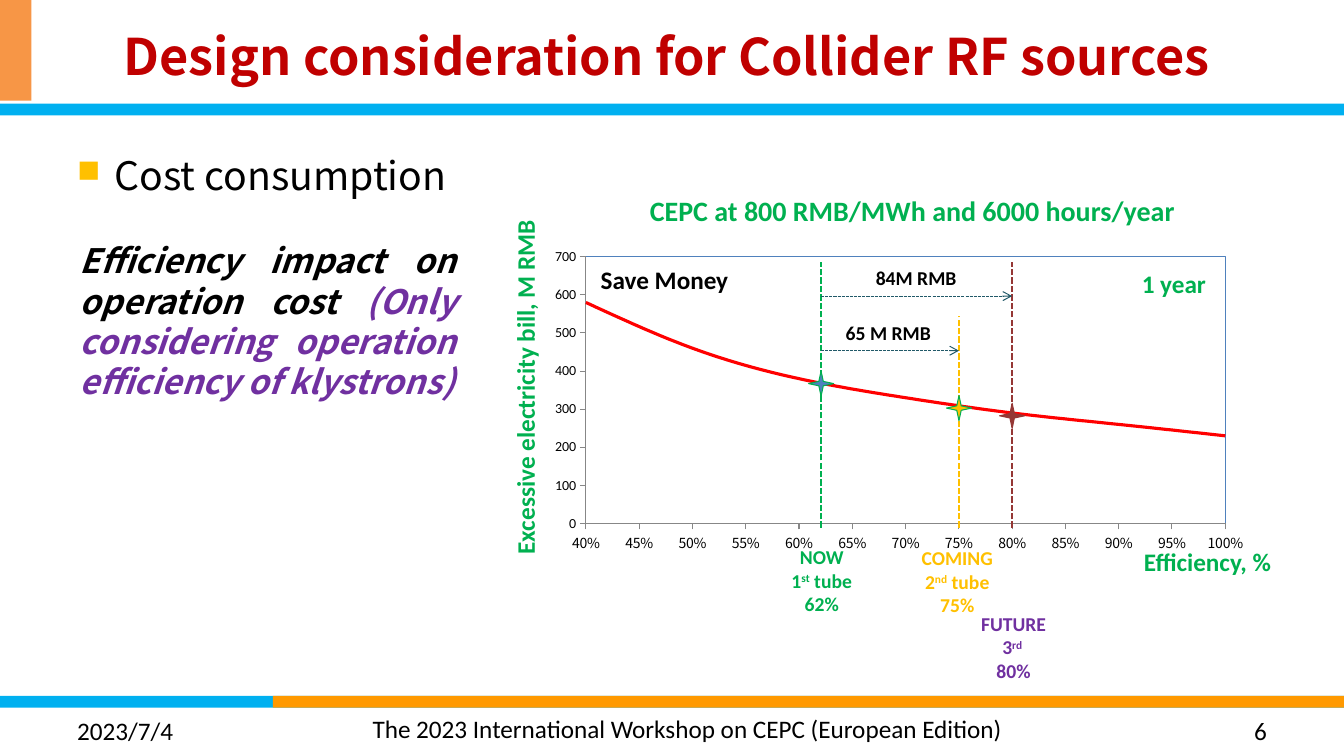
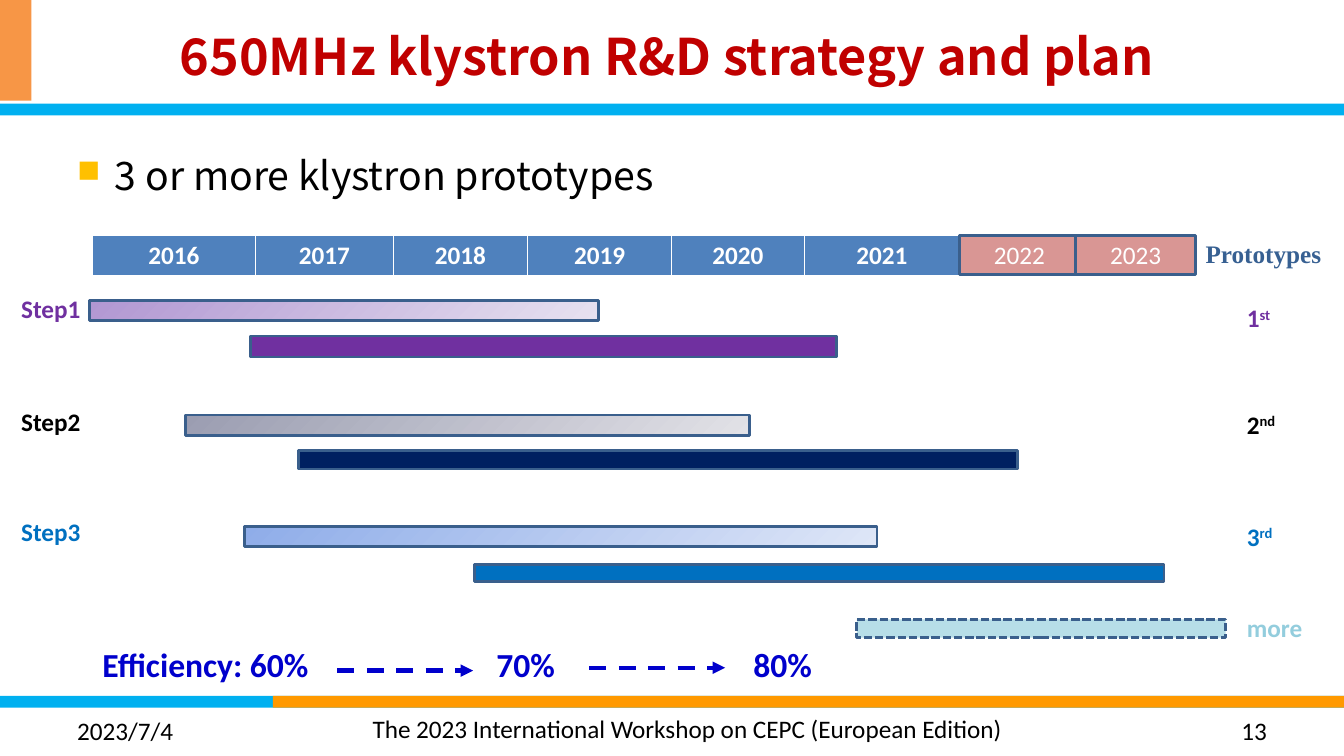
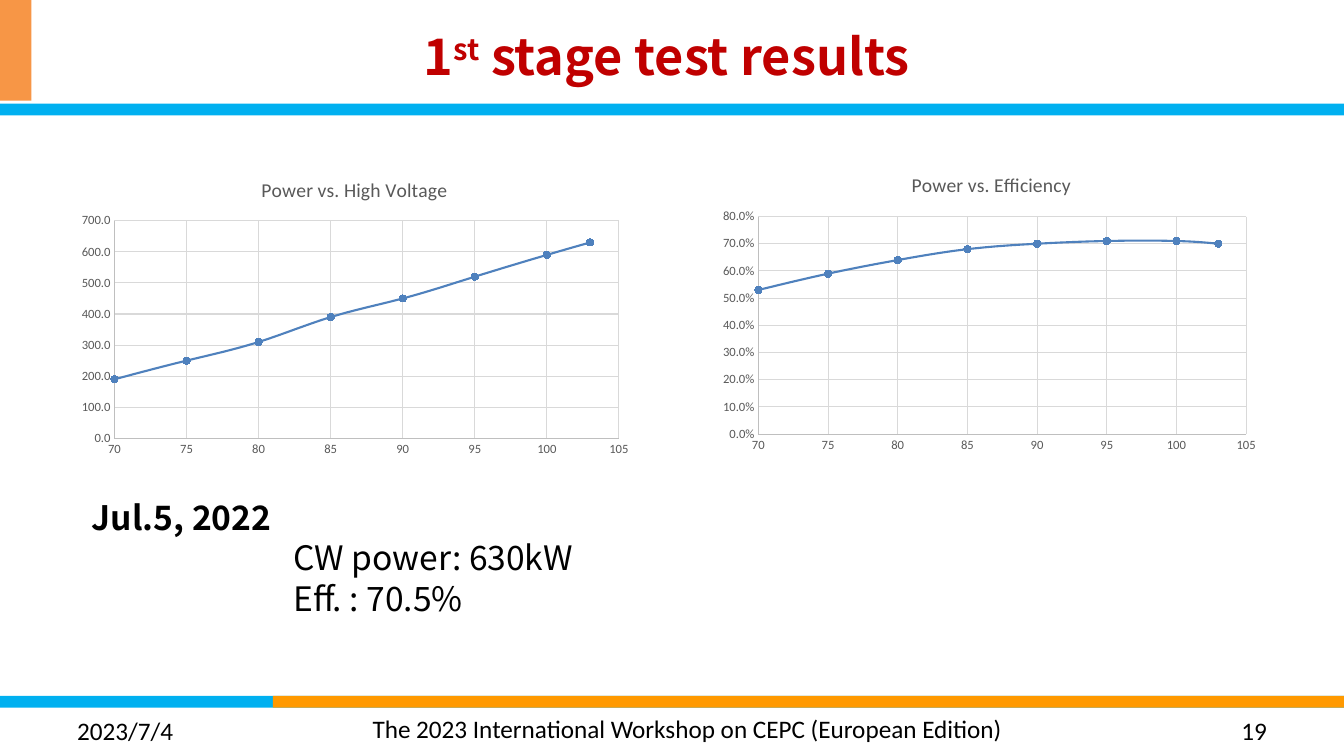
from dataclasses import dataclass, replace
from lxml.etree import SubElement
from pptx import Presentation
from pptx.chart.data import XyChartData
from pptx.dml.color import RGBColor
from pptx.enum.chart import XL_CHART_TYPE as Kind, XL_MARKER_STYLE as Mark
from pptx.enum.chart import XL_TICK_MARK as Tick
from pptx.enum.dml import MSO_LINE as Dash
from pptx.enum.shapes import MSO_CONNECTOR as Conn, MSO_SHAPE as Form
from pptx.enum.text import MSO_ANCHOR as Anchor, MSO_AUTO_SIZE as Fit, PP_ALIGN as Align
from pptx.oxml import parse_xml
from pptx.oxml.ns import nsdecls, qn
from pptx.util import Pt

BLACK = RGBColor(0, 0, 0)
WHITE = RGBColor(255, 255, 255)
SKY = RGBColor(0, 0xB0, 0xF0)
AMBER = RGBColor(0xFF, 0x99, 0)
PEACH = RGBColor(0xF7, 0x96, 0x46)
CRIMSON = RGBColor(0xC0, 0, 0)
RED = RGBColor(255, 0, 0)
GREEN = RGBColor(0, 0xB0, 0x50)
GOLD = RGBColor(0xFF, 0xC0, 0)
PURPLE = RGBColor(0x70, 0x30, 0xA0)
BROWN = RGBColor(0x95, 0x37, 0x35)
TEAL = RGBColor(0x21, 0x59, 0x68)
STEEL = RGBColor(0x4F, 0x81, 0xBD)
EDGE = RGBColor(0x3A, 0x5F, 0x8C)
NAVY = RGBColor(0, 0x20, 0x60)
BLUE = RGBColor(0, 0x70, 0xC0)
ROYAL = RGBColor(0, 0, 0xCC)
DUSK = RGBColor(0x37, 0x60, 0x92)
ROSE = RGBColor(0xD9, 0x96, 0x94)
ICE = RGBColor(0xB7, 0xDE, 0xE8)
AQUA = RGBColor(0x93, 0xCD, 0xDD)
INK = RGBColor(0x59, 0x59, 0x59)
GRAY = RGBColor(0x87, 0x87, 0x87)
SILVER = RGBColor(0xBF, 0xBF, 0xBF)
MIST = RGBColor(0xD9, 0xD9, 0xD9)
LILAC = RGBColor(0xB1, 0x97, 0xD2), RGBColor(0xE7, 0xE1, 0xF0)
SLATE = RGBColor(0x9B, 0x9D, 0xB1), RGBColor(0xE2, 0xE2, 0xE7)
AZURE = RGBColor(0x8F, 0xAD, 0xE9), RGBColor(0xDE, 0xE6, 0xF7)

SANS = "Calibri"
NOTO = "Noto Sans CJK SC"
SERIF = "Times New Roman"
WIDE, HIGH = 960, 540


@dataclass(frozen=True)
class Style:
    size: float = 18
    color: RGBColor = BLACK
    bold: bool = False
    face: str = SANS
    ital: bool = False
    sup: bool = False


BASE = Style()
HEAD = Style(36, CRIMSON, True, NOTO)
BODY = Style(28, face=NOTO)
NOTE = Style(24, face=NOTO)
TAG = Style(14, bold=True)
SUP = dict(sup=True)


def pts(*nums):
    return [Pt(n) for n in nums]


def dress(font, style):
    font.name, font.size = style.face, Pt(style.size)
    font.bold, font.italic = style.bold, style.ital
    font.color.rgb = style.color


def fill_para(para, runs, style, align=None):
    """Add runs; each is a string or a (string, style changes) pair."""
    para.alignment = align
    for item in [runs] if isinstance(runs, str) else runs:
        text, diff = (item, {}) if isinstance(item, str) else item
        look = replace(style, **diff)
        run = para.add_run()
        run.text = text
        dress(run.font, look)
        if look.sup:
            run.font._element.set("baseline", "30000")


def add_text(slide, box, paras, style, align=None, wrap=False):
    """Add a text box; unless it wraps, it grows to fit its lines."""
    shape = slide.shapes.add_textbox(*pts(*box))
    frame = shape.text_frame
    frame.word_wrap = wrap
    frame.auto_size = Fit.NONE if wrap else Fit.SHAPE_TO_FIT_TEXT
    for i, runs in enumerate(paras):
        para = frame.add_paragraph() if i else frame.paragraphs[0]
        fill_para(para, runs, style, align)
    return shape


def add_form(slide, box, fill, edge=None, width=2, dash=None, form=Form.RECTANGLE):
    """Add a preset shape; a pair of fill colours makes a gradient."""
    shape = slide.shapes.add_shape(form, *pts(*box))
    shape.shadow.inherit = False
    if isinstance(fill, RGBColor):
        shape.fill.solid()
        shape.fill.fore_color.rgb = fill
    else:
        shape.fill.gradient()
        shape.fill.gradient_angle = 315
        for stop, color in zip(shape.fill.gradient_stops, fill):
            stop.color.rgb = color
    if edge is None:
        shape.line.fill.background()
    else:
        shape.line.color.rgb, shape.line.width = edge, Pt(width)
        shape.line.dash_style = dash
    return shape


def add_line(slide, ends, color, width, dash, head=None):
    link = slide.shapes.add_connector(Conn.STRAIGHT, *pts(*ends))
    link.line.color.rgb, link.line.width = color, Pt(width)
    link.line.dash_style = dash
    props = link._element.spPr
    if head:
        SubElement(props.find(qn("a:ln")), qn("a:tailEnd"), type=head)
    SubElement(props, qn("a:effectLst"))


def add_frame(deck, title, number):
    """Start a slide with the shared bands, title and footer."""
    slide = deck.slides.add_slide(deck.slide_layouts[6])
    for box, color in [
        ((0, 497, WIDE, 8.5), SKY),
        ((195, 497, WIDE - 195, 8.5), AMBER),
        ((0, 74, WIDE, 8.5), SKY),
        ((0, 0, 22.5, 72), PEACH),
    ]:
        add_form(slide, box, color)
    add_text(slide, (259, 506, 480, 29),
             ["The 2023 International Workshop on CEPC (European Edition)"], BASE, wrap=True)
    add_text(slide, (48, 507.5, 224, 29), ["2023/7/4"], BASE, wrap=True)
    add_text(slide, (688, 507.5, 224, 29), [str(number)], BASE, Align.RIGHT, True)
    head = add_text(slide, (52.5, 11, 847.5, 57), [title], HEAD, Align.CENTER, True)
    head.text_frame.vertical_anchor = Anchor.MIDDLE
    return slide


def add_point(slide, text):
    """Add the square-bulleted opening line."""
    shape = add_text(slide, (48, 101.5, 864, 61), [text], BODY, Align.JUSTIFY, True)
    para = shape.text_frame.paragraphs[0]
    para.line_spacing, para.space_after = 1.1, Pt(10)
    props = para._p.get_or_add_pPr()
    props.set("marL", str(Pt(27)))
    props.set("indent", str(-Pt(27)))
    color = SubElement(props, qn("a:buClr"))
    SubElement(color, qn("a:srgbClr"), val=str(GOLD))
    SubElement(props, qn("a:buSzPct"), val="80000")
    SubElement(props, qn("a:buChar"), char="■")


def set_place(node, spot, **place):
    """Give a chart part a manual layout, as its child number spot."""
    old = node.find(qn("c:layout"))
    if old is not None:
        node.remove(old)
    layout = parse_xml(f"<c:layout {nsdecls('c')}/>")
    node.insert(spot, layout)
    hold = SubElement(layout, qn("c:manualLayout"))
    if "w" in place:
        SubElement(hold, qn("c:layoutTarget"), val="inner")
    for key in ("xMode", "yMode"):
        SubElement(hold, qn(f"c:{key}"), val="edge")
    for key, val in place.items():
        SubElement(hold, qn(f"c:{key}"), val=str(val))


def set_axis(axis, span, form, style, edge, tick, grid):
    axis.minimum_scale, axis.maximum_scale, axis.major_unit = span
    axis.tick_labels.number_format = form
    axis.tick_labels.number_format_is_linked = False
    dress(axis.tick_labels.font, style)
    axis.format.line.color.rgb, axis.format.line.width = edge, Pt(0.75)
    axis.major_tick_mark, axis.minor_tick_mark = tick, Tick.NONE
    axis.has_major_gridlines = grid
    if grid:
        line = axis.major_gridlines.format.line
        line.color.rgb, line.width = MIST, Pt(0.75)


def add_curve(slide, box, data, color, width, kind, place):
    """Add a smooth one-series scatter chart."""
    table = XyChartData()
    series = table.add_series("Series 1")
    for x, y in data:
        series.add_data_point(x, y)
    chart = slide.shapes.add_chart(kind, *pts(*box), table).chart
    chart.has_legend = chart.has_title = False
    dress(chart.font, Style(10))
    plot = chart.plots[0]
    plot.vary_by_categories = False
    line = plot.series[0].format.line
    line.color.rgb, line.width = color, Pt(width)
    for node in chart._chartSpace.iter(qn("c:smooth")):
        node.set("val", "1")
    set_place(chart._chartSpace.chart.plotArea, 0, **place)
    return chart


def add_bill(slide, box):
    """Add the electricity bill chart with its marks and labels."""
    left, top, width, height = box
    data = zip((0.4, 0.5, 0.6, 0.7, 0.8, 0.9, 1), (580, 460, 380, 330, 290, 260, 230))
    chart = add_curve(slide, box, data, RED, 2.25, Kind.XY_SCATTER_SMOOTH_NO_MARKERS,
                      dict(x=0.066, y=0.069, w=0.9, h=0.851))
    set_axis(chart.category_axis, (0.4, 1, 0.05), "0%", Style(10, face=NOTO),
             GRAY, Tick.OUTSIDE, False)
    set_axis(chart.value_axis, (0, 700, 100), "General", Style(10), GRAY, Tick.OUTSIDE, False)
    chart._chartSpace.chart.plotArea.append(parse_xml(
        f'<c:spPr {nsdecls("c", "a")}><a:ln w="{Pt(0.75)}"><a:solidFill>'
        f'<a:srgbClr val="{STEEL}"/></a:solidFill></a:ln></c:spPr>'))

    lime = Style(18, GREEN, True)
    add_text(slide, (left + 70.5, top - 33, 392.5, 31.5),
             ["CEPC at 800 RMB/MWh and 6000 hours/year"], replace(lime, size=20), Align.CENTER)
    side = add_text(slide, (left - 137.5, top + 93, 255, 29),
                    ["Excessive electricity bill, M RMB"], lime)
    side.rotation = 270
    add_text(slide, (left + 423.5, top + 20, 60.5, 29), ["1 year"], lime)
    add_text(slide, (left + 425, top + 219, 106.5, 29), ["Efficiency, %"], lime)
    add_text(slide, (left + 37, top + 17, 106.5, 29), ["Save Money"], replace(lime, color=BLACK))

    base = top + 209
    marks = [
        (201.5, 19.5, 106, GREEN, STEEL, GREEN),
        (300, 57.5, 123.5, GOLD, GOLD, GREEN),
        (338, 19.5, 129, BROWN, BROWN, BROWN),
    ]
    for x, start, mid, color, fill, edge in marks:
        x += left
        add_line(slide, (x, base, x, top + start), color, 1.5, Dash.SQUARE_DOT)
        add_form(slide, (x - 9, top + mid - 9, 18, 18), fill, edge, 0.75, form=Form.STAR_4_POINT)
    now = left + marks[0][0]
    for mark, y, gap, wide, text in [
        (marks[1], 82.5, 10.5, 76, "65 M RMB"),
        (marks[2], 43.5, 32, 73, "84M RMB"),
    ]:
        y += top
        add_line(slide, (now, y, left + mark[0], y), TEAL, 0.75, Dash.SQUARE_DOT, "arrow")
        add_text(slide, (now + gap, y - 25, wide, 24.5), [text], TAG)
    for x, y, wide, color, paras in [
        (172.5, 218, 59, GREEN, ["NOW", ["1", ("st", SUP), " tube"], "62%"]),
        (264.5, 218.5, 68.5, GOLD, ["COMING", ["2", ("nd", SUP), " tube"], "75%"]),
        (308.5, 265.5, 61, PURPLE, ["FUTURE", ["3", ("rd ", SUP)], "80%"]),
    ]:
        add_text(slide, (left + x, top + y, wide, 58.5), paras,
                 replace(TAG, color=color), Align.CENTER)


def add_years(slide, left, top):
    """Add the year header: a table and two boxes for the later years."""
    cols = (116.5, 98.5, 96, 103, 94.5, 111)
    shape = slide.shapes.add_table(1, len(cols), *pts(left, top, sum(cols), 29.5))
    table = shape.table
    for i, wide in enumerate(cols):
        table.columns[i].width = Pt(wide)
        cell = table.cell(0, i)
        props = cell._tc.get_or_add_tcPr()
        for side, width in zip("LRTB", (1, 1, 1, 3)):
            line = SubElement(props, qn(f"a:ln{side}"), w=str(Pt(width)))
            SubElement(SubElement(line, qn("a:solidFill")), qn("a:srgbClr"), val=str(WHITE))
        cell.fill.solid()
        cell.fill.fore_color.rgb = STEEL
        fill_para(cell.text_frame.paragraphs[0], str(2016 + i),
                  Style(18, WHITE, True), Align.CENTER)
    for year, x in (("2022", 0), ("2023", 83)):
        form = add_form(slide, (left + sum(cols) + x, top, 85.5, 28), ROSE, EDGE)
        form.text_frame.vertical_anchor = Anchor.MIDDLE
        fill_para(form.text_frame.paragraphs[0], year, Style(18, WHITE), Align.CENTER)
    add_text(slide, (left + 788, top - 1, 98, 29), ["Prototypes"], Style(18, DUSK, True, SERIF))


def add_step(slide, top, name, rank, color, bars):
    """Add one step: its name, its rank (offset, runs) and its bars."""
    style = Style(18, color, True)
    add_text(slide, (8, top, 57, 29), [name], style)
    drop, runs = rank
    add_text(slide, (883.5, top + drop, 37, 29), [runs], style)
    for x, y, wide, high, fill in bars:
        add_form(slide, (x, top + y, wide, high), fill, EDGE)


def add_goals(slide, left, top):
    """Add the row of efficiency goals joined by dashed arrows."""
    for x, wide, text in ((0, 170, "Efficiency: 60%"), (281.5, 57, "70%"), (465, 57, "80%")):
        add_text(slide, (left + x, top, wide, 36), [text], Style(24, ROYAL, True))
    for x, y in ((175, 22.5), (355, 20.5)):
        add_line(slide, (left + x, top + y, left + x + 97, top + y), ROYAL, 3, Dash.DASH, "triangle")


def add_test(slide, box, title, shift, vals, span, form):
    """Add one test chart; shift is the title's place across the box."""
    volts = (70, 75, 80, 85, 90, 95, 100, 103)
    chart = add_curve(slide, box, zip(volts, vals), STEEL, 1.5, Kind.XY_SCATTER_SMOOTH,
                      dict(x=0.08, y=0.2, w=0.88, h=0.72))
    small = Style(9, INK)
    set_axis(chart.category_axis, (70, 105, 5), "General", small, SILVER, Tick.NONE, True)
    set_axis(chart.value_axis, span, form, small, SILVER, Tick.NONE, True)
    marker = chart.plots[0].series[0].marker
    marker.style, marker.size = Mark.CIRCLE, 5
    marker.format.fill.solid()
    marker.format.fill.fore_color.rgb = STEEL
    marker.format.line.color.rgb = STEEL
    chart.has_title = True
    head = chart.chart_title
    fill_para(head.text_frame.paragraphs[0], title, Style(14, INK))
    set_place(head._element, 1, x=shift, y=0.04)


def cost_slide(deck):
    slide = add_frame(deck, "Design consideration for Collider RF sources", 6)
    add_point(slide, "Cost consumption")
    add_bill(slide, (385, 168, 507.5, 227))
    add_text(slide, (50, 168, 283, 124),
             [["Efficiency impact on operation cost ",
               ("(Only considering operation efficiency of klystrons)", dict(color=PURPLE))]],
             replace(NOTE, bold=True, ital=True), Align.JUSTIFY, True)


def plan_slide(deck):
    slide = add_frame(deck, "650MHz klystron R&D strategy and plan", 13)
    add_point(slide, "3 or more klystron prototypes")
    add_years(slide, 66, 168)
    add_step(slide, 206, "Step1", (6.5, ["1", ("st", SUP)]), PURPLE,
             [(64, 8.5, 363.5, 14.5, LILAC), (179, 34, 418.5, 15, PURPLE)])
    add_step(slide, 287, "Step2", (1.5, ["2", ("nd", SUP)]), BLACK,
             [(132.5, 9.5, 403, 14.5, SLATE), (213, 35, 514, 13, NAVY)])
    add_step(slide, 365, "Step3", (3.5, ["3", ("rd", SUP)]), BLUE,
             [(174.5, 11, 452, 14.5, AZURE), (339, 38, 492.5, 12.5, BLUE)])
    add_form(slide, (612, 442.5, 263.5, 13), ICE, EDGE, dash=Dash.SQUARE_DOT)
    add_text(slide, (883.5, 433.5, 54, 29), ["more"], Style(18, AQUA, True))
    add_goals(slide, 66, 456.5)


def test_slide(deck):
    slide = add_frame(deck, ["1", ("st", SUP), " stage test results"], 19)
    note = add_text(slide, (58.5, 351.5, 762, 94),
                    [[("Jul.5, 2022", dict(bold=True))], "CW power: 630kW", "Eff. : 70.5%"],
                    NOTE, Align.JUSTIFY, True)
    for para in note.text_frame.paragraphs[1:]:
        para._p.get_or_add_pPr().set("marL", str(Pt(144)))
    add_test(slide, (49, 114.5, 409.5, 216), "Power vs. High Voltage", 0.33,
             (190, 250, 310, 390, 450, 520, 590, 630), (0, 700, 100), "0.0")
    add_test(slide, (510, 111.5, 396, 216), "Power vs. Efficiency", 0.35,
             (0.53, 0.59, 0.64, 0.68, 0.7, 0.71, 0.71, 0.7), (0, 0.8, 0.1), "0.0%")


def main():
    deck = Presentation()
    deck.slide_width, deck.slide_height = pts(WIDE, HIGH)
    for build in (cost_slide, plan_slide, test_slide):
        build(deck)
    deck.save("out.pptx")


if __name__ == "__main__":
    main()
